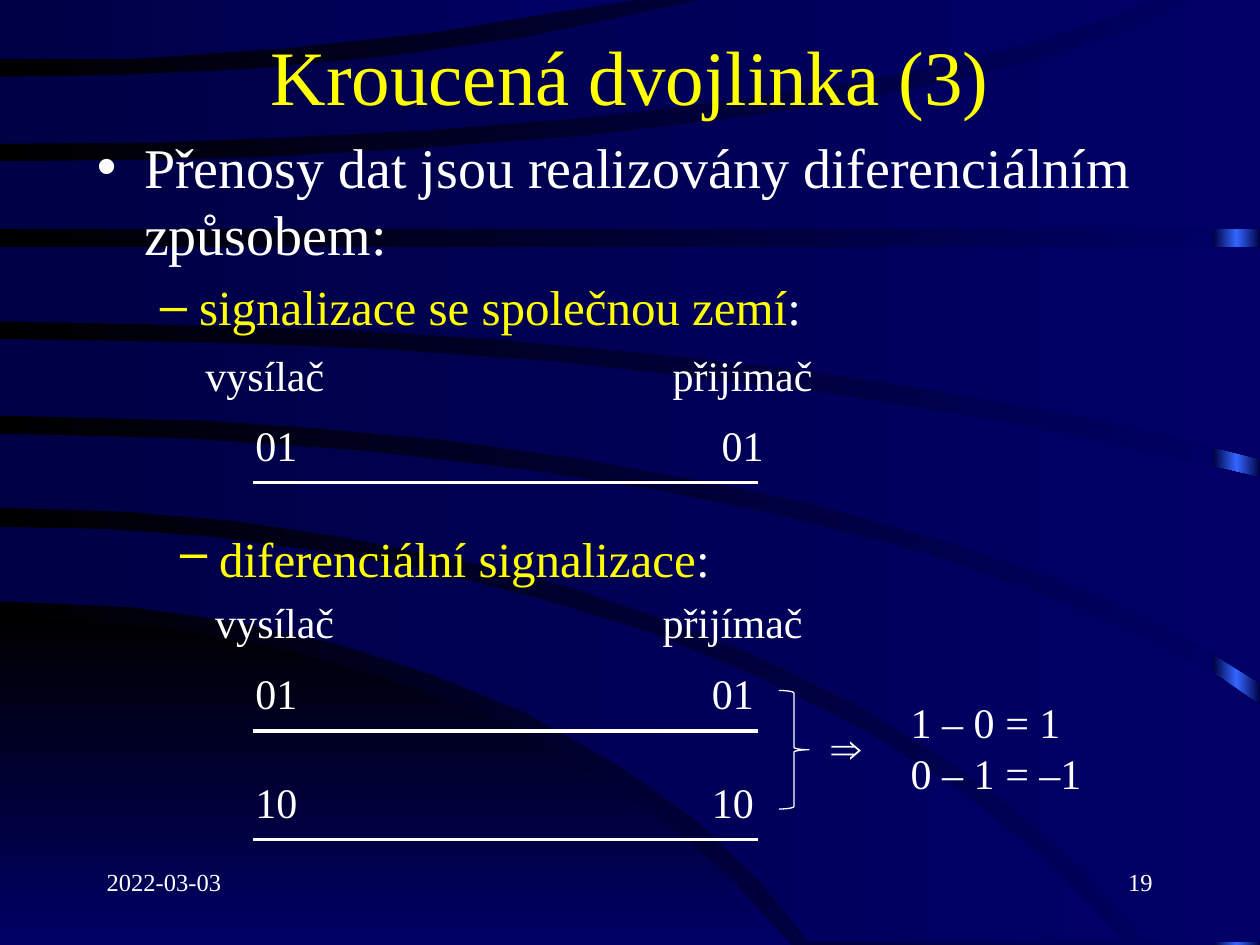
from lxml.etree import SubElement
from pptx import Presentation
from pptx.dml.color import RGBColor
from pptx.enum.shapes import MSO_CONNECTOR, MSO_SHAPE
from pptx.enum.text import MSO_ANCHOR, MSO_AUTO_SIZE, PP_ALIGN
from pptx.oxml.ns import qn
from pptx.util import Cm, Pt

BLACK = RGBColor(0x00, 0x00, 0x00)
DARK = RGBColor(0x00, 0x00, 0x44)
NAVY = RGBColor(0x00, 0x00, 0x66)
BLUE = RGBColor(0x33, 0x66, 0xFF)
YELLOW = RGBColor(0xFF, 0xFF, 0x00)
WHITE = RGBColor(0xFF, 0xFF, 0xFF)

# Background outlines, points in cm
HILL = [(0, 19.05), (0, 12.47), (1.55, 12.52), (3.53, 12.7), (5.54, 13.06),
        (7.75, 13.67), (9.8, 14.43), (11.73, 15.39), (13.41, 16.54),
        (14.66, 17.63), (15.95, 19.05)]
BANDS = [
    [(0, 10.62), (2.21, 10.67), (4.22, 10.82), (6.32, 11.1), (8.51, 11.48),
     (10.87, 12.07), (13.08, 12.75), (15.39, 13.69), (17.48, 14.76), (19.46, 16),
     (21.16, 17.4), (22.68, 19), (16.31, 19), (15.34, 17.78), (14.05, 16.54),
     (12.5, 15.44), (10.57, 14.35), (8.69, 13.59), (6.81, 12.98), (4.7, 12.52),
     (2.67, 12.24), (0, 12.12)],
    [(0, 8.74), (3.66, 8.84), (7.34, 9.09), (10.82, 9.5), (13.23, 9.88),
     (15.72, 10.39), (18.75, 11.18), (20.78, 11.89), (22.96, 12.78),
     (24.61, 13.67), (25.4, 14.22), (25.4, 19), (23.09, 19), (21.89, 17.63),
     (20.57, 16.41), (19.2, 15.39), (17.22, 14.17), (15.16, 13.18),
     (13.23, 12.42), (11.23, 11.76), (9.14, 11.25), (6.78, 10.8),
     (4.65, 10.49), (2.46, 10.31), (0, 10.24)],
    [(0, 6.83), (4.27, 6.91), (7.65, 7.04), (11.13, 7.29), (14.38, 7.65),
     (16.81, 7.95), (19.51, 8.38), (21.82, 8.79), (25.4, 9.63), (25.4, 13.77),
     (24.16, 13), (22.38, 12.12), (20.75, 11.48), (18.87, 10.85),
     (16.28, 10.13), (14.22, 9.7), (11.73, 9.25), (8.92, 8.86), (6.48, 8.64),
     (4.24, 8.48), (0, 8.38)],
    [(0, 4.98), (25.4, 4.98), (25.4, 9.25), (23.24, 8.71), (20.65, 8.18),
     (17.83, 7.7), (15.42, 7.37), (12.75, 7.09), (9.88, 6.83), (7.06, 6.65),
     (3.73, 6.55), (0, 6.48)],
    [(0, 3.25), (2.36, 3.23), (5.16, 3.18), (8.36, 3), (11.81, 2.74),
     (15.16, 2.34), (17.37, 2.01), (19.58, 1.55), (21.21, 1.12), (22.66, 0.64),
     (23.37, 0.3), (23.95, 0), (25.4, 0), (25.4, 4.62), (0, 4.62)],
    [(0, 1.55), (2.21, 1.52), (5, 1.4), (7.82, 1.14), (10.57, 0.76),
     (12.24, 0.41), (14.12, 0), (23.29, 0), (22.43, 0.33), (21.08, 0.79),
     (19.61, 1.17), (17.35, 1.63), (14.66, 2.03), (11.91, 2.36), (8.66, 2.62),
     (5.74, 2.77), (3.2, 2.87), (0, 2.9)],
    [(0, 0), (12.73, 0), (11.48, 0.2), (8.79, 0.64), (5.74, 0.97),
     (2.57, 1.19), (0, 1.19)],
]


class Deck:
    font = "Times New Roman"

    def __init__(self, prs):
        self.s = prs.slides.add_slide(prs.slide_layouts[1])

    def gradient(self, fill, element, colors, angle=0):
        fill.gradient()
        fill.gradient_angle = angle
        stops = element.find(".//" + qn("a:gsLst"))
        for gs in list(stops):
            stops.remove(gs)
        for i, color in enumerate(colors):
            gs = SubElement(stops, qn("a:gs"), pos=str(100000 * i // (len(colors) - 1)))
            SubElement(gs, qn("a:srgbClr"), val=str(color))

    def background(self, *colors):
        self.gradient(self.s.background.fill, self.s.element, colors)

    def decorate(self, sp, colors, angle=0):
        sp.shadow.inherit = False
        sp.line.fill.background()
        self.gradient(sp.fill, sp.element, colors, angle)

    def strip(self, x, y, w, h, colors):
        sp = self.s.shapes.add_shape(MSO_SHAPE.RECTANGLE, Cm(x), Cm(y), Cm(w), Cm(h))
        self.decorate(sp, colors)

    def outline(self, points, colors, angle=0):
        first, *rest = [(x * 100, y * 100) for x, y in points]
        fb = self.s.shapes.build_freeform(*first, scale=Cm(0.01))
        fb.add_line_segments(rest, close=True)
        self.decorate(fb.convert_to_shape(), colors, angle)

    def run(self, p, text, size, color=WHITE):
        r = p.add_run()
        r.text = text
        r.font.name, r.font.size = self.font, Pt(size)
        r.font.color.rgb = color

    def frame(self, sp, anchor=MSO_ANCHOR.TOP):
        tf = sp.text_frame
        tf.word_wrap = True
        tf.auto_size = MSO_AUTO_SIZE.NONE
        tf.vertical_anchor = anchor
        return tf

    def placeholder(self, idx, x, y, w, h, anchor=MSO_ANCHOR.TOP):
        sp = self.s.placeholders[idx]
        self.s.shapes.element.append(sp.element)  # bring in front of the decoration
        sp.left, sp.top, sp.width, sp.height = Cm(x), Cm(y), Cm(w), Cm(h)
        return self.frame(sp, anchor)

    def box(self, x, y, w, h, anchor=MSO_ANCHOR.TOP):
        return self.frame(self.s.shapes.add_textbox(Cm(x), Cm(y), Cm(w), Cm(h)), anchor)

    def text(self, x, y, w, h, *lines, size=24, align=PP_ALIGN.LEFT, anchor=MSO_ANCHOR.TOP):
        tf = self.box(x, y, w, h, anchor)
        for i, line in enumerate(lines):
            p = tf.add_paragraph() if i else tf.paragraphs[0]
            p.alignment = align
            self.run(p, line, size)

    def bullet(self, p, level, size, *runs):
        p.level = level
        p.space_before = Pt(size / 5)
        margin, indent, char = [(0.95, 0.95, "•"), (2.06, 0.79, "–")][level]
        pPr = p._p.get_or_add_pPr()
        pPr.set("marL", str(Cm(margin)))
        pPr.set("indent", str(-Cm(indent)))
        SubElement(pPr, qn("a:buChar"), char=char)
        for text, color in runs:
            self.run(p, text, size, color)

    def line(self, x1, x2, y):
        c = self.s.shapes.add_connector(MSO_CONNECTOR.STRAIGHT, Cm(x1), Cm(y), Cm(x2), Cm(y))
        c.line.color.rgb, c.line.width = WHITE, Pt(2)
        SubElement(c.element.spPr, qn("a:effectLst"))

    def brace(self, x, y, w, h):
        sp = self.s.shapes.add_shape(MSO_SHAPE.RIGHT_BRACE, Cm(x), Cm(y), Cm(w), Cm(h))
        sp.shadow.inherit = False
        sp.fill.background()
        sp.line.color.rgb, sp.line.width = WHITE, Pt(0.75)
        sp.adjustments[0] = 0.083

    def ends(self, y, sender_x, receiver_x):
        self.text(sender_x, y, 3, 1.2, "vysílač")
        self.text(receiver_x, y, 3.4, 1.2, "přijímač")

    def wire(self, y, receiver_x, bits):
        for x in (4.9, receiver_x):
            self.text(x, y, 1.4, 1, bits)
        self.line(5.11, 15.29, y + 1.4)


def main():
    prs = Presentation()
    prs.slide_width, prs.slide_height = Cm(25.4), Cm(19.05)
    d = Deck(prs)

    # Background
    d.background(BLACK, NAVY)
    d.strip(24.46, 0, 0.94, 19.05, [DARK, BLUE, DARK])
    d.outline(HILL, [BLACK, NAVY], angle=270)
    for band in BANDS:
        d.outline(band, [DARK, NAVY])

    # Footer
    d.text(1.9, 17.35, 5.28, 1.27, "2022-03-03", size=14)
    d.text(18.21, 17.35, 5.28, 1.27, "19", size=14, align=PP_ALIGN.RIGHT)

    # Title and list
    p = d.placeholder(0, 1.9, 0.64, 21.6, 1.75, MSO_ANCHOR.MIDDLE).paragraphs[0]
    p.alignment = PP_ALIGN.CENTER
    d.run(p, "Kroucená dvojlinka (3)", 44, YELLOW)
    tf = d.placeholder(1, 1.7, 2.54, 22, 4.98)
    d.bullet(tf.paragraphs[0], 0, 32,
             ("Přenosy dat jsou realizovány diferenciálním způsobem:", WHITE))
    d.bullet(tf.add_paragraph(), 1, 28,
             ("signalizace se společnou zemí", YELLOW), (":", WHITE))
    d.bullet(d.box(2.11, 10.52, 22, 2).paragraphs[0], 1, 28,
             ("diferenciální signalizace", YELLOW), (":", WHITE))

    # Common ground signalling
    d.ends(6.93, 3.89, 13.31)
    d.wire(8.33, 14.3, "01")

    # Differential signalling
    d.ends(11.91, 4.09, 13.11)
    d.wire(13.34, 14.1, "01")
    d.wire(15.52, 14.1, "10")
    d.brace(15.7, 13.92, 0.61, 2.39)
    d.text(16.51, 14.55, 1.4, 1, "⇒", anchor=MSO_ANCHOR.MIDDLE)
    d.text(18.11, 13.92, 4, 2.2, "1 – 0 = 1", "0 – 1 = –1")

    prs.save("out.pptx")


if __name__ == "__main__":
    main()
